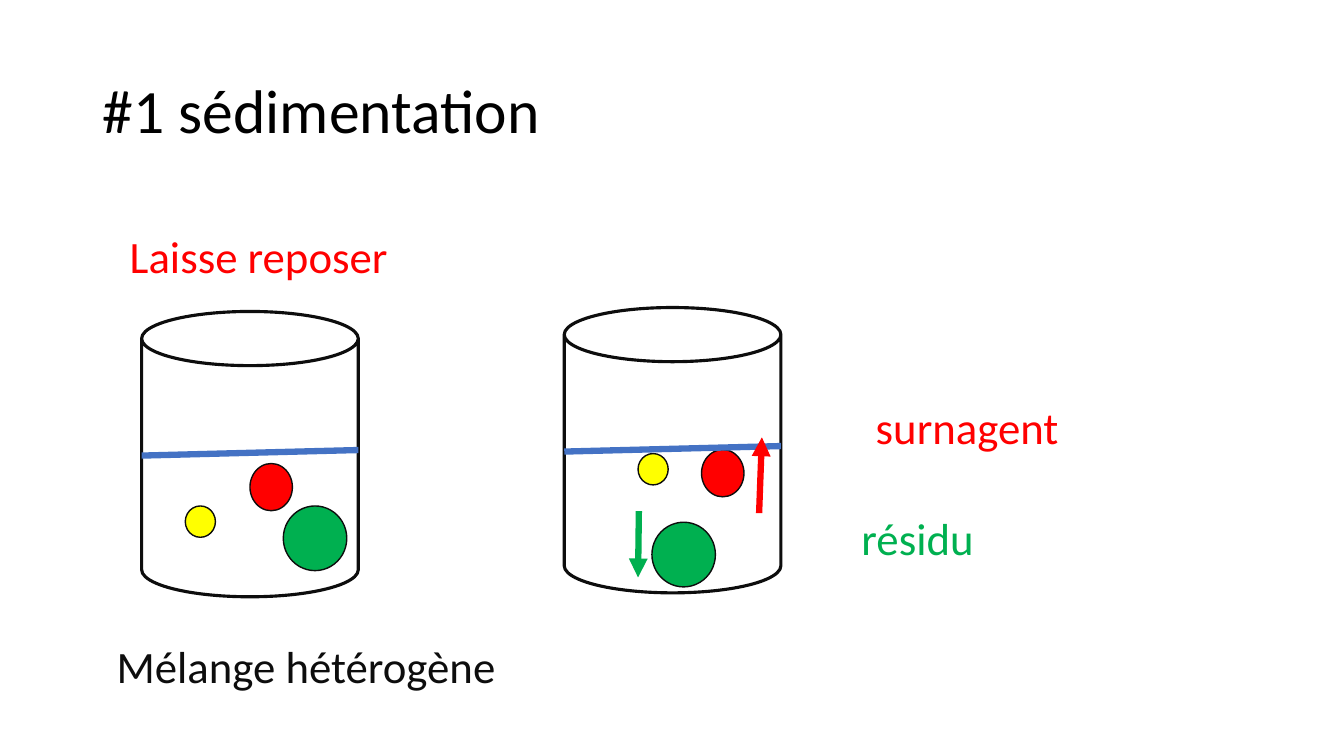
from lxml import etree
from pptx import Presentation
from pptx.dml.color import RGBColor
from pptx.enum.shapes import MSO_CONNECTOR as Connector, MSO_SHAPE as Shape
from pptx.enum.text import MSO_ANCHOR as Anchor, PP_ALIGN as Align
from pptx.oxml.ns import qn
from pptx.util import Cm, Pt

BLACK, INK, RED, GREEN = "000000", "0D0D0D", "FF0000", "00B050"
YELLOW, WATER = "FFFF00", "4472C4"


def write(shape, text, size, color, anchor=Anchor.TOP):
    frame = shape.text_frame
    frame.word_wrap = True
    frame.vertical_anchor = anchor
    paragraph = frame.paragraphs[0]
    paragraph.alignment = Align.LEFT
    run = paragraph.add_run()
    run.text = text
    run.font.name = "Calibri"
    run.font.size = Pt(size)
    run.font.color.rgb = RGBColor.from_string(color)
    return paragraph


def draw_line(start, end, color, arrow=False):
    line = slide.shapes.add_connector(
        Connector.STRAIGHT, *[Cm(value) for value in start + end])
    line.line.width = Pt(4.5)
    line.line.color.rgb = RGBColor.from_string(color)
    if arrow:
        outline = line.line._get_or_add_ln()
        etree.SubElement(outline, qn("a:tailEnd"), type="triangle")
    etree.SubElement(line._element.spPr, qn("a:effectLst"))


presentation = Presentation()
presentation.slide_width, presentation.slide_height = Cm(33.87), Cm(19.05)
slide = presentation.slides.add_slide(presentation.slide_layouts[5])

title = slide.shapes.title
title.left, title.top, title.width, title.height = Cm(2.34), Cm(1.02), Cm(29.21), Cm(3.68)
write(title, "#1 sédimentation", 44, BLACK, Anchor.MIDDLE).line_spacing = 0.9

# Particle colour: width, height
particle_sizes = {GREEN: (1.6, 1.63), RED: (1.07, 1.19), YELLOW: (0.76, 0.79)}

# Beaker corner, then particle corners measured from it
beakers = [
    (3.57, 7.85, {GREEN: (3.57, 4.9), RED: (2.73, 3.83), YELLOW: (1.1, 4.9)}),
    (14.22, 7.75, {GREEN: (2.21, 5.41), RED: (3.46, 3.58), YELLOW: (1.86, 3.68)}),
]
for left, top, particles in beakers:
    can = slide.shapes.add_shape(Shape.CAN, Cm(left), Cm(top), Cm(5.46), Cm(7.19))
    can.shadow.inherit = False
    can.fill.background()
    can.line.color.rgb = RGBColor.from_string(INK)
    can.line.width = Pt(2.25)
    for color, (x, y) in particles.items():
        width, height = particle_sizes[color]
        particle = slide.shapes.add_shape(
            Shape.OVAL, Cm(left + x), Cm(top + y), Cm(width), Cm(height))
        particle.shadow.inherit = False
        particle.fill.solid()
        particle.fill.fore_color.rgb = RGBColor.from_string(color)
        particle.line.color.rgb = RGBColor.from_string(INK)
        particle.line.width = Pt(1)
    draw_line((left, top + 3.63), (left + 5.46, top + 3.49), WATER)

draw_line((16.1, 12.88), (16.08, 14.55), GREEN, arrow=True)
draw_line((19.13, 12.93), (19.2, 11.02), RED, arrow=True)

labels = [
    ("Laisse reposer", 3.02, 5.64, 8.28, RED),
    ("Mélange hétérogène", 2.69, 15.98, 10.13, INK),
    ("surnagent", 21.82, 9.96, 5.38, RED),
    ("résidu", 21.46, 12.75, 3.53, GREEN),
]
for text, left, top, width, color in labels:
    label = slide.shapes.add_textbox(Cm(left), Cm(top), Cm(width), Cm(1.63))
    write(label, text, 32, color)

presentation.save("out.pptx")
